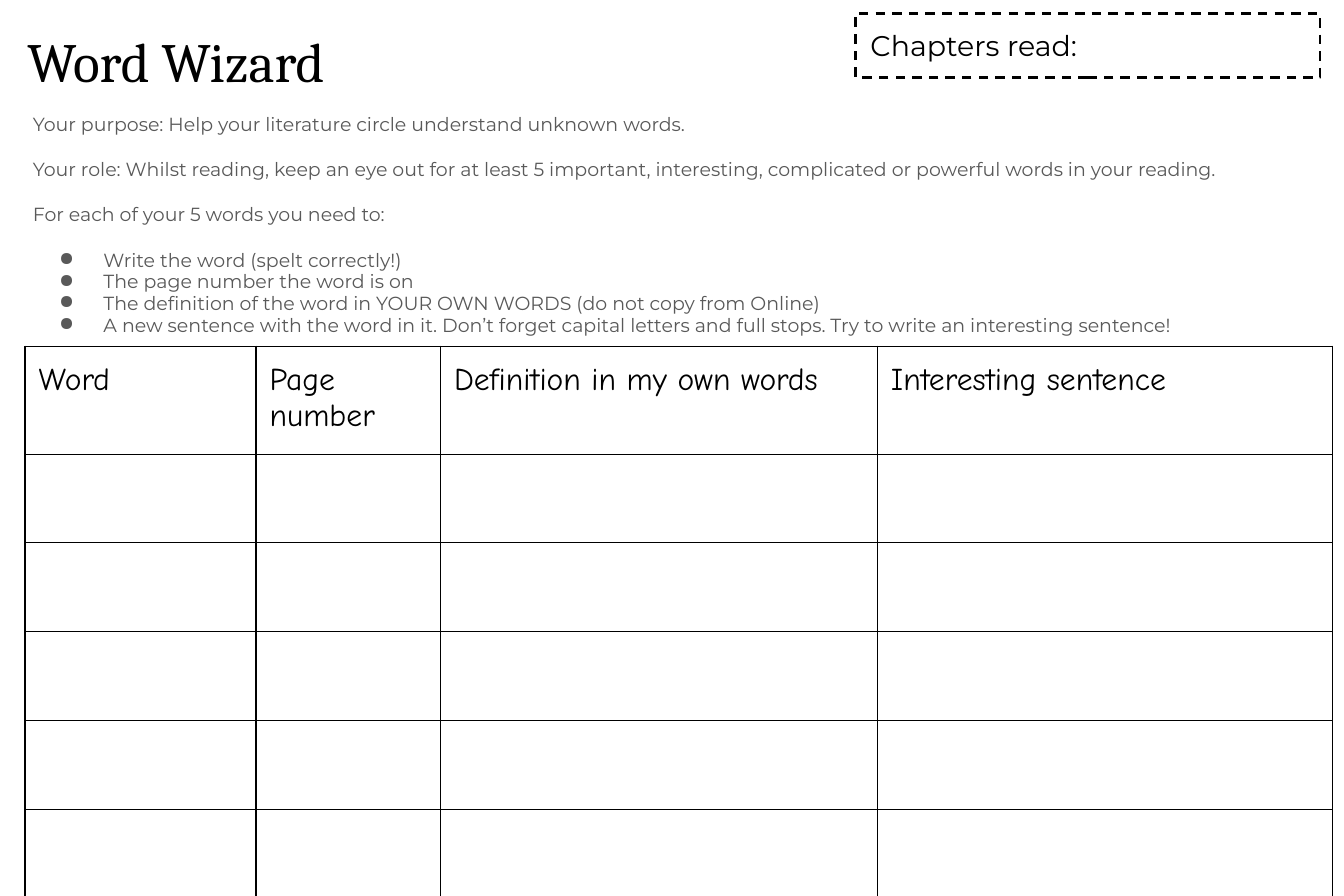
from dataclasses import dataclass
from typing import Any

from lxml import etree
from pptx import Presentation
from pptx.dml.color import RGBColor
from pptx.enum.dml import MSO_LINE
from pptx.enum.shapes import MSO_SHAPE
from pptx.enum.text import MSO_ANCHOR, PP_ALIGN
from pptx.oxml.ns import qn
from pptx.util import Inches, Pt

BLACK = RGBColor(0x00, 0x00, 0x00)
GREY = RGBColor(0x59, 0x59, 0x59)
DASH = MSO_LINE.DASH
RECTANGLE = MSO_SHAPE.RECTANGLE
TOP, MIDDLE = MSO_ANCHOR.TOP, MSO_ANCHOR.MIDDLE
LEFT = PP_ALIGN.LEFT

SLIDE_WIDTH, SLIDE_HEIGHT = Inches(11.81), Inches(7.87)
BLANK_LAYOUT = 6
INSET = Inches(0.13)
BORDER_WIDTH = Pt(0.75)
BULLET_MARGIN, BULLET_HANGING = Inches(0.62), Inches(-0.39)


@dataclass(frozen=True)
class Area:
    """A place on the slide, in percent of its width and height."""
    left: float
    top: float
    width: float
    height: float

    def lengths(self) -> tuple[int, int, int, int]:
        return across(self.left), down(self.top), across(self.width), down(self.height)


@dataclass(frozen=True)
class Style:
    font: str
    size: float
    color: RGBColor


@dataclass(frozen=True)
class Instruction:
    text: str
    space_before: float = 0
    bulleted: bool = False


TITLE_STYLE = Style("Cambria", 35, BLACK)
INSTRUCTION_STYLE = Style("Montserrat", 12, GREY)
CHAPTERS_STYLE = Style("Montserrat", 18, BLACK)
HEADING_STYLE = Style("Comic Neue", 20, BLACK)

TITLE_AREA = Area(0.93, 1.14, 93.23, 11.18)
INSTRUCTIONS_AREA = Area(1.35, 11.05, 98.14, 29.99)
CHAPTERS_AREA = Area(63.67, 1.52, 34.55, 7.12)

INSTRUCTIONS = (
    Instruction("Your purpose: Help your literature circle understand unknown words."),
    Instruction("Your role: Whilst reading, keep an eye out for at least 5 important, "
                "interesting, complicated or powerful words in your reading.", 15),
    Instruction("For each of your 5 words you need to:", 15),
    Instruction("Write the word (spelt correctly!)", 15, True),
    Instruction("The page number the word is on", 0, True),
    Instruction("The definition of the word in YOUR OWN WORDS (do not copy from Online)", 0, True),
    Instruction("A new sentence with the word in it. Don’t forget capital letters and "
                "full stops. Try to write an interesting sentence!", 0, True),
)

TABLE_LEFT, TABLE_TOP = 1.86, 38.63
COLUMNS = {
    "Word": 17.19,
    "Page number": 13.72,
    "Definition in my own words": 32.51,
    "Interesting sentence": 33.87,
}
WORD_COUNT = 5
ROW_HEIGHTS = [12.07] + [9.91] * WORD_COUNT

FRAME_FORMAT = {
    "word_wrap": True,
    "margin_left": INSET,
    "margin_top": INSET,
    "margin_right": INSET,
    "margin_bottom": INSET,
}
CELL_FORMAT = {
    "margin_left": Inches(0.12),
    "margin_top": Inches(0.14),
    "margin_right": Inches(0.12),
    "margin_bottom": Inches(0.14),
    "vertical_anchor": TOP,
}


def across(percent: float) -> int:
    return round(SLIDE_WIDTH * percent / 100)


def down(percent: float) -> int:
    return round(SLIDE_HEIGHT * percent / 100)


def apply_format(target: Any, values: dict[str, Any]) -> None:
    for name, value in values.items():
        setattr(target, name, value)


def write(paragraph: Any, text: str, style: Style) -> None:
    paragraph.alignment = LEFT
    run = paragraph.add_run()
    run.text = text
    apply_format(run.font, {"name": style.font, "size": Pt(style.size)})
    run.font.color.rgb = style.color


def add_bullet(paragraph: Any, color: RGBColor) -> None:
    properties = paragraph._p.get_or_add_pPr()
    properties.set("marL", str(BULLET_MARGIN))
    properties.set("indent", str(BULLET_HANGING))
    bullet_color = etree.SubElement(properties, qn("a:buClr"))
    etree.SubElement(bullet_color, qn("a:srgbClr"), val=str(color))
    etree.SubElement(properties, qn("a:buChar"), char="●")


def add_borders(cell: Any) -> None:
    properties = cell._tc.get_or_add_tcPr()
    for position, side in enumerate(("a:lnL", "a:lnR", "a:lnT", "a:lnB")):
        border = etree.Element(qn(side), w=str(BORDER_WIDTH))
        fill = etree.SubElement(border, qn("a:solidFill"))
        etree.SubElement(fill, qn("a:srgbClr"), val=str(BLACK))
        properties.insert(position, border)


def add_text_frame(slide: Any, area: Area, anchor: MSO_ANCHOR) -> Any:
    frame = slide.shapes.add_textbox(*area.lengths()).text_frame
    apply_format(frame, FRAME_FORMAT | {"vertical_anchor": anchor})
    return frame


def add_instructions(slide: Any) -> None:
    frame = add_text_frame(slide, INSTRUCTIONS_AREA, TOP)
    for index, instruction in enumerate(INSTRUCTIONS):
        paragraph = frame.add_paragraph() if index else frame.paragraphs[0]
        apply_format(paragraph, {"line_spacing": 0.95,
                                 "space_before": Pt(instruction.space_before)})
        write(paragraph, instruction.text, INSTRUCTION_STYLE)
        if instruction.bulleted:
            add_bullet(paragraph, INSTRUCTION_STYLE.color)


def add_chapters_box(slide: Any) -> None:
    box = slide.shapes.add_shape(RECTANGLE, *CHAPTERS_AREA.lengths())
    box.shadow.inherit = False
    box.fill.background()
    box.line.color.rgb = BLACK
    apply_format(box.line, {"width": Pt(1.5), "dash_style": DASH})
    apply_format(box.text_frame, FRAME_FORMAT | {"vertical_anchor": MIDDLE})
    write(box.text_frame.paragraphs[0], "Chapters read:", CHAPTERS_STYLE)


def add_word_table(slide: Any) -> None:
    area = Area(TABLE_LEFT, TABLE_TOP, sum(COLUMNS.values()), sum(ROW_HEIGHTS))
    table = slide.shapes.add_table(len(ROW_HEIGHTS), len(COLUMNS), *area.lengths()).table
    apply_format(table, {"first_row": False, "horz_banding": False})
    for column, width in zip(table.columns, COLUMNS.values()):
        column.width = across(width)
    for row, height in zip(table.rows, ROW_HEIGHTS):
        row.height = down(height)
    for cell in table.iter_cells():
        apply_format(cell, CELL_FORMAT)
        cell.fill.background()
        add_borders(cell)
    for cell, heading in zip(table.rows[0].cells, COLUMNS):
        write(cell.text_frame.paragraphs[0], heading, HEADING_STYLE)


def main() -> None:
    presentation = Presentation()
    apply_format(presentation, {"slide_width": SLIDE_WIDTH, "slide_height": SLIDE_HEIGHT})
    slide = presentation.slides.add_slide(presentation.slide_layouts[BLANK_LAYOUT])
    title = add_text_frame(slide, TITLE_AREA, MIDDLE)
    write(title.paragraphs[0], "Word Wizard", TITLE_STYLE)
    add_instructions(slide)
    add_chapters_box(slide)
    add_word_table(slide)
    presentation.save("out.pptx")


if __name__ == "__main__":
    main()
